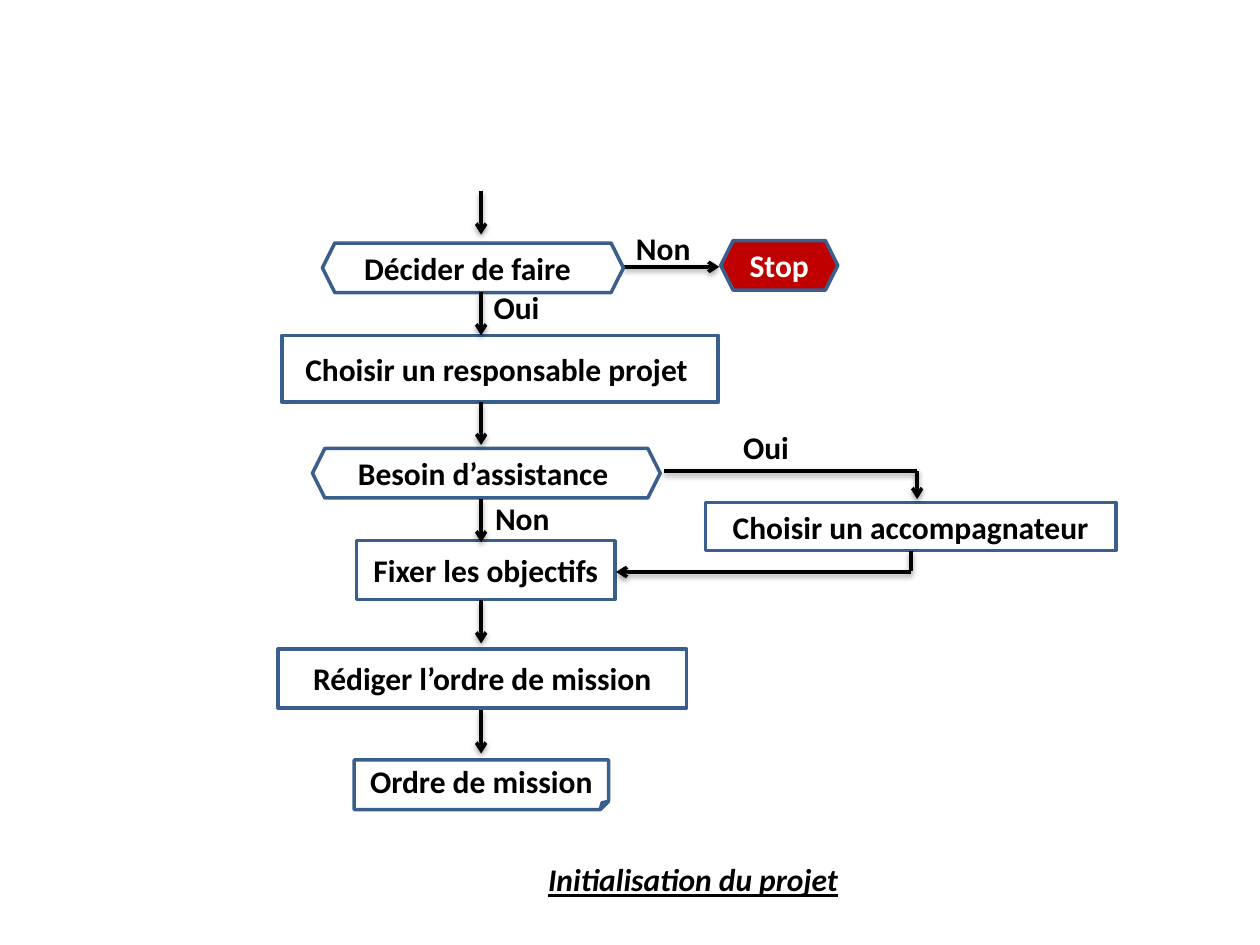
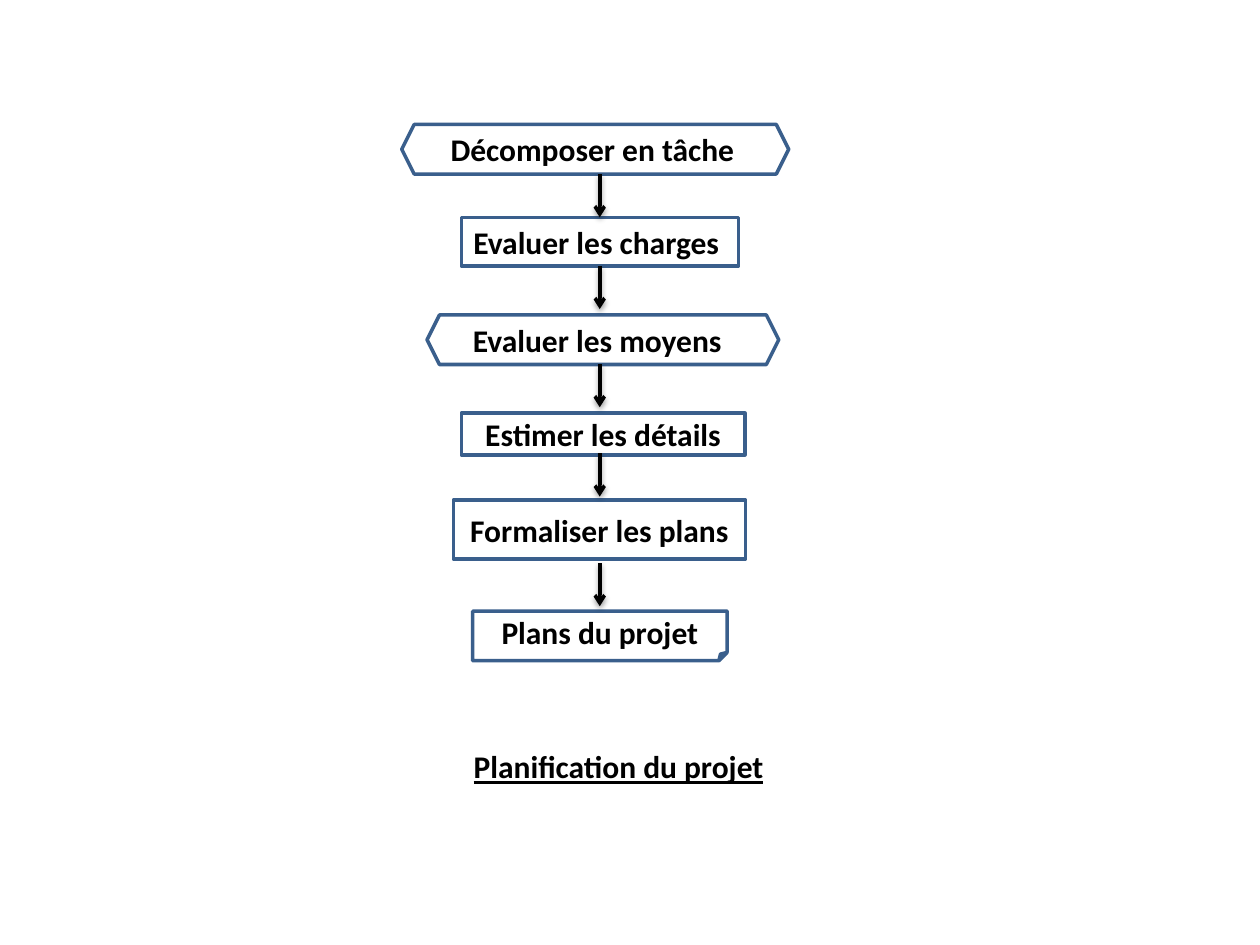
"""Build two project flowchart slides: initialisation and planning."""
from dataclasses import dataclass

from lxml import etree
from pptx import Presentation, util as u
from pptx.dml.color import RGBColor
from pptx.enum import shapes, text
from pptx.oxml import parse_xml
from pptx.oxml.ns import nsdecls, qn

HEX = shapes.MSO_SHAPE.HEXAGON
RECT = shapes.MSO_SHAPE.RECTANGLE
NOTE = shapes.MSO_SHAPE.FOLDED_CORNER
LEFT, CENTER = text.PP_ALIGN.LEFT, text.PP_ALIGN.CENTER


@dataclass(frozen=True)
class Theme:
    """Colours, type and line sizes shared by the slides."""
    ink: RGBColor = RGBColor(0x00, 0x00, 0x00)
    paper: RGBColor = RGBColor(0xFF, 0xFF, 0xFF)
    border: RGBColor = RGBColor(0x3A, 0x5F, 0x8C)
    stop: RGBColor = RGBColor(0xC0, 0x00, 0x00)
    font: str = "Calibri"
    size: u.Length = u.Pt(18)
    stroke: u.Length = u.Pt(2)
    step: float = 0.87
    hex_height: float = 1.0
    label_height: float = 1.02
    shadow: str = (
        f'<a:effectLst {nsdecls("a")}>'
        '<a:outerShdw blurRad="40000" dist="20000" dir="5400000" rotWithShape="0">'
        '<a:srgbClr val="000000"><a:alpha val="38000"/></a:srgbClr>'
        '</a:outerShdw></a:effectLst>')


class Flowchart:
    """Draws flowchart elements, measured in cm, on the current slide."""

    def __init__(self, prs, theme):
        self.prs, self.theme, self.s = prs, theme, None

    def new_slide(self):
        """Start a blank slide."""
        self.s = self.prs.slides.add_slide(self.prs.slide_layouts[6])

    def set_text(self, sp, words, align, color):
        """Put bold text in a shape and return its font."""
        p = sp.text_frame.paragraphs[0]
        p.text, p.alignment = words, align
        f = p.font
        f.name, f.size, f.bold = self.theme.font, self.theme.size, True
        f.color.rgb = color
        return f

    def box(self, kind, words, x, y, w, h, align=CENTER, fill=None, color=None):
        """Draw an outlined shape with text."""
        t = self.theme
        sp = self.s.shapes.add_shape(kind, *map(u.Cm, (x, y, w, h)))
        sp.shadow.inherit = False
        sp.fill.solid()
        sp.fill.fore_color.rgb = fill or t.paper
        sp.line.color.rgb, sp.line.width = t.border, t.stroke
        tf = sp.text_frame
        tf.word_wrap = align == LEFT
        tf.vertical_anchor = text.MSO_ANCHOR.MIDDLE
        self.set_text(sp, words, align, color or t.ink)

    def decision(self, words, x, y, w):
        """Draw a decision hexagon with left-aligned text."""
        self.box(HEX, words, x, y, w, self.theme.hex_height, LEFT)

    def label(self, words, x, y, w=1.93):
        """Draw free text and return its font."""
        sp = self.s.shapes.add_textbox(*map(u.Cm, (x, y, w, self.theme.label_height)))
        sp.text_frame.word_wrap = True
        return self.set_text(sp, words, LEFT, self.theme.ink)

    def caption(self, words, x, y, italic=False):
        """Draw the underlined name of the chart."""
        f = self.label(words, x, y, 6.5)
        f.underline, f.italic = True, italic

    def line(self, x1, y1, x2, y2, arrow=True):
        """Draw a shadowed line, with an arrowhead at its end if asked."""
        cn = self.s.shapes.add_connector(
            shapes.MSO_CONNECTOR.STRAIGHT, *map(u.Cm, (x1, y1, x2, y2)))
        cn.line.color.rgb, cn.line.width = self.theme.ink, self.theme.stroke
        pr = cn._element.spPr
        if arrow:
            etree.SubElement(pr.find(qn("a:ln")), qn("a:tailEnd"), type="arrow")
        pr.append(parse_xml(self.theme.shadow))

    def steps(self, x, tops):
        """Draw the equal downward arrows of the main column."""
        for y in tops:
            self.line(x, y, x, y + self.theme.step)


def initialisation(c):
    """Draw the project initialisation slide."""
    c.new_slide()
    c.line(12.57, 5.38, 14.5, 5.38)
    c.decision("Décider de faire", 6.5, 4.9, 6.07)
    c.decision("Besoin d’assistance", 6.3, 9.04, 7.01)
    for kind, words, *area in (
            (RECT, "Choisir un responsable projet ", 5.69, 6.76, 8.79, 1.35),
            (RECT, "Rédiger l’ordre de mission", 5.61, 13.08, 8.23, 1.19),
            (RECT, "Fixer les objectifs", 7.19, 10.9, 5.21, 1.19),
            (RECT, "Choisir un accompagnateur", 14.22, 10.13, 8.28, 0.97),
            (NOTE, "Ordre de mission", 7.14, 15.32, 5.13, 1.0)):
        c.box(kind, words, *area)
    c.box(HEX, "Stop", 14.53, 4.85, 2.36, 1.0,
          fill=c.theme.stop, color=c.theme.paper)
    c.steps(9.7, (3.86, 5.89, 8.1, 10.06, 12.1, 14.32))
    c.line(18.49, 9.5, 18.49, 10.06)
    c.line(18.49, 9.5, 13.39, 9.5, arrow=False)
    c.line(18.36, 11.1, 18.36, 11.51, arrow=False)
    c.line(18.36, 11.53, 12.42, 11.53)
    for words, x, y in (("Non", 12.57, 4.5), ("Oui", 9.7, 5.69),
                        ("Oui", 14.73, 8.51), ("Non", 9.73, 9.93)):
        c.label(words, x, y)
    c.caption("Initialisation du projet", 10.8, 17.22, italic=True)


def planning(c):
    """Draw the project planning slide."""
    c.new_slide()
    c.decision("Décomposer en tâche", 8.1, 2.51, 7.8)
    c.decision("Evaluer les moyens", 8.61, 6.35, 7.09)
    for kind, words, *area in (
            (RECT, "Evaluer les charges ", 9.3, 4.39, 5.59, 0.97),
            (RECT, "Formaliser les plans", 9.14, 10.08, 5.89, 1.19),
            (RECT, "Estimer les détails", 9.3, 8.33, 5.72, 0.84),
            (NOTE, "Plans du projet", 9.53, 12.32, 5.13, 1.0)):
        c.box(kind, words, *area)
    c.steps(12.09, (3.51, 5.36, 7.34, 9.14, 11.35))
    c.caption("Planification du projet", 9.3, 14.94)


def main():
    """Build and save the presentation."""
    prs = Presentation()
    prs.slide_width, prs.slide_height = u.Cm(25.4), u.Cm(19.05)
    chart = Flowchart(prs, Theme())
    initialisation(chart)
    planning(chart)
    prs.save("out.pptx")


if __name__ == "__main__":
    main()
